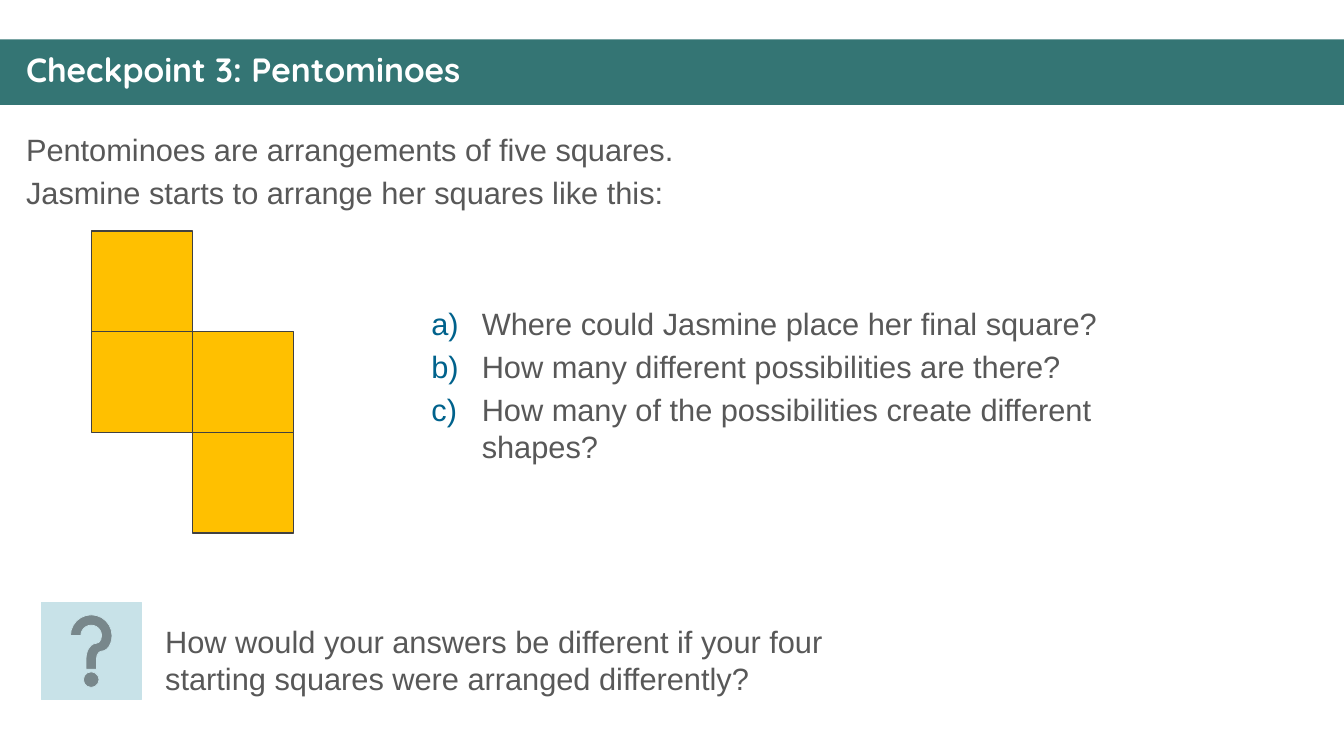
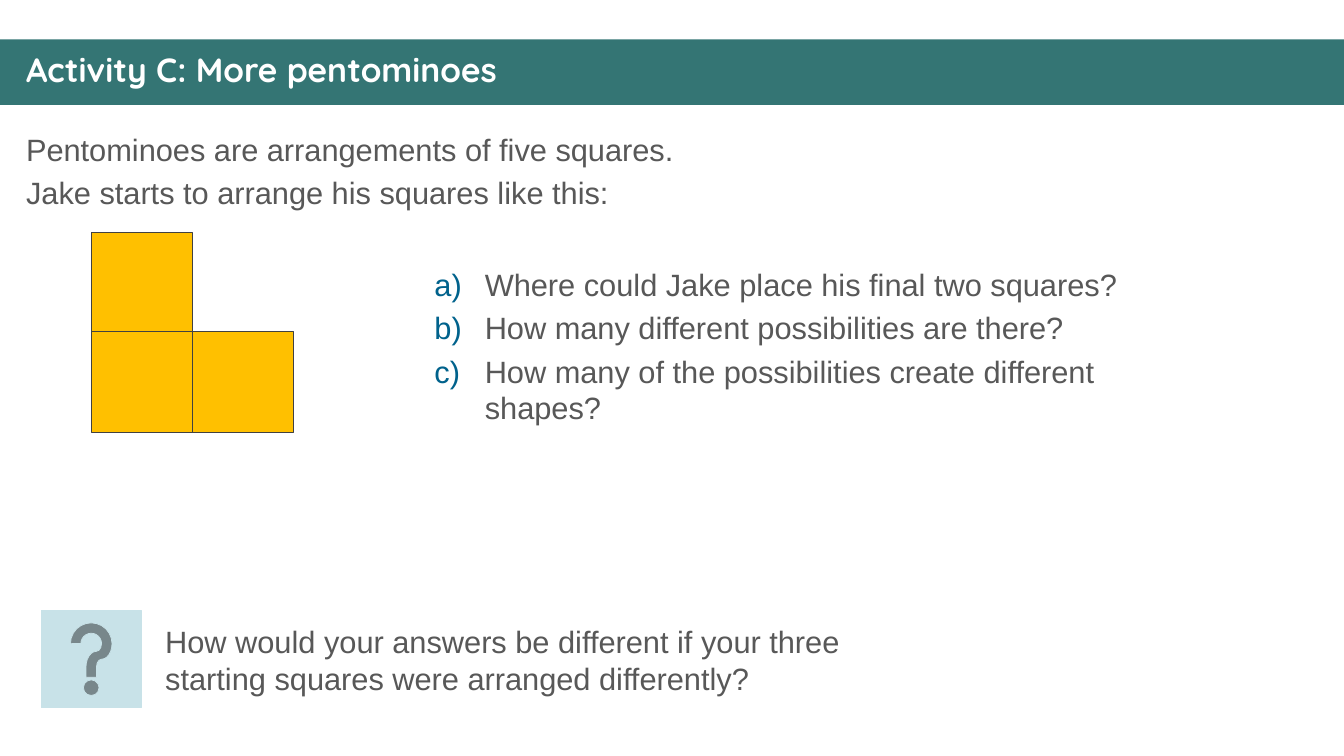
"""Build two pentomino task slides."""
from lxml import etree
from pptx import Presentation
from pptx.dml.color import RGBColor
from pptx.enum.shapes import MSO_SHAPE
from pptx.enum.text import MSO_ANCHOR
from pptx.oxml.ns import qn
from pptx.util import Inches, Pt

RECTANGLE = MSO_SHAPE.RECTANGLE
HELP_BUTTON = MSO_SHAPE.ACTION_BUTTON_HELP
MIDDLE = MSO_ANCHOR.MIDDLE

COLORS = {
    "band": "347574",
    "title": "FFFFFF",
    "text": "585858",
    "letter": "00628C",
    "square": "FFC000",
    "outline": "414141",
    "help": "C8E2E8",
}
TITLE_FONT, BODY_FONT = "Quicksand", "Arial"
TITLE_SIZE, BODY_SIZE = 24, 22
SLIDE_WIDTH, SLIDE_HEIGHT = 13.33, 7.5
TEXT_WIDTH = 7.58
SQUARE = 1
SQUARES_LEFT, SQUARES_TOP = 0.91, 2.29

TASKS = [
    {
        "title": "Checkpoint 3: Pentominoes",
        "intro": [
            "Pentominoes are arrangements of five squares.",
            "Jasmine starts to arrange her squares like this:",
        ],
        "squares": [(0, 0), (0, 1), (1, 1), (1, 2)],
        "first_square_drop": 0,
        "questions": [
            "Where could Jasmine place her final square?",
            "How many different possibilities are there?",
            "How many of the possibilities create different shapes?",
        ],
        "questions_at": (4.18, 2.94),
        "help_top": 5.98,
        "extension": "How would your answers be different if your four "
                     "starting squares were arranged differently?",
    },
    {
        "title": "Activity C: More pentominoes",
        "intro": [
            "Pentominoes are arrangements of five squares.",
            "Jake starts to arrange his squares like this:",
        ],
        "squares": [(0, 0), (0, 1), (1, 1)],
        "first_square_drop": 0.02,
        "questions": [
            "Where could Jake place his final two squares?",
            "How many different possibilities are there?",
            "How many of the possibilities create different shapes?",
        ],
        "questions_at": (4.21, 2.56),
        "help_top": 6.06,
        "extension": "How would your answers be different if your three "
                     "starting squares were arranged differently?",
    },
]


def color(name):
    return RGBColor.from_string(COLORS[name])


def add_block(slide, kind, box, fill, line=None, line_width=1):
    block = slide.shapes.add_shape(kind, *map(Inches, box))
    block.shadow.inherit = False
    block.fill.solid()
    block.fill.fore_color.rgb = color(fill)
    if line:
        block.line.color.rgb = color(line)
        block.line.width = Pt(line_width)
    else:
        block.line.fill.background()


def add_run(paragraph, text, font, size, fill, bold=False):
    run = paragraph.add_run()
    run.text = text
    run.font.name = font
    run.font.size = Pt(size)
    run.font.bold = bold
    run.font.color.rgb = color(fill)


def add_letter(paragraph):
    properties = paragraph._p.get_or_add_pPr()
    properties.set("marL", str(Inches(0.5)))
    properties.set("indent", str(-Inches(0.5)))
    letter_color = etree.SubElement(properties, qn("a:buClr"))
    etree.SubElement(letter_color, qn("a:srgbClr"), val=COLORS["letter"])
    etree.SubElement(properties, qn("a:buFont"), typeface=BODY_FONT)
    etree.SubElement(properties, qn("a:buAutoNum"), type="alphaLcParenR")


def add_text(slide, box, lines, lettered=False):
    frame = slide.shapes.add_textbox(*map(Inches, box)).text_frame
    frame.word_wrap = True
    frame.margin_top = Inches(0.08)
    for index, line in enumerate(lines):
        paragraph = frame.add_paragraph() if index else frame.paragraphs[0]
        if lettered:
            add_letter(paragraph)
        if index:
            paragraph.space_before = Pt(BODY_SIZE * 0.2)
        add_run(paragraph, line, BODY_FONT, BODY_SIZE, "text")


def add_title(slide, title):
    add_block(slide, RECTANGLE, (0, 0.39, SLIDE_WIDTH, 0.65), "band")
    box = map(Inches, (0.16, 0.48, 13.04, 0.47))
    frame = slide.shapes.add_textbox(*box).text_frame
    frame.word_wrap = True
    frame.vertical_anchor = MIDDLE
    heading = frame.paragraphs[0]
    heading.line_spacing = 0.9
    add_run(heading, title, TITLE_FONT, TITLE_SIZE, "title", bold=True)


def add_squares(slide, cells, first_drop):
    for index, (column, row) in enumerate(cells):
        left = SQUARES_LEFT + column * SQUARE
        top = SQUARES_TOP + row * SQUARE + (0 if index else first_drop)
        add_block(slide, RECTANGLE, (left, top, SQUARE, SQUARE),
                  "square", "outline")


def add_task(deck, task):
    slide = deck.slides.add_slide(deck.slide_layouts[6])
    add_title(slide, task["title"])
    add_block(slide, HELP_BUTTON, (0.41, task["help_top"], 0.99, 0.96),
              "help", "help", 0.5)
    add_text(slide, (0.16, 1.22, TEXT_WIDTH, 0.92), task["intro"])
    add_squares(slide, task["squares"], task["first_square_drop"])
    add_text(slide, (*task["questions_at"], TEXT_WIDTH, 1.73),
             task["questions"], lettered=True)
    add_text(slide, (1.54, 6.1, TEXT_WIDTH, 0.84), [task["extension"]])


def main():
    deck = Presentation()
    deck.slide_width = Inches(SLIDE_WIDTH)
    deck.slide_height = Inches(SLIDE_HEIGHT)
    for task in TASKS:
        add_task(deck, task)
    deck.save("out.pptx")


if __name__ == "__main__":
    main()
